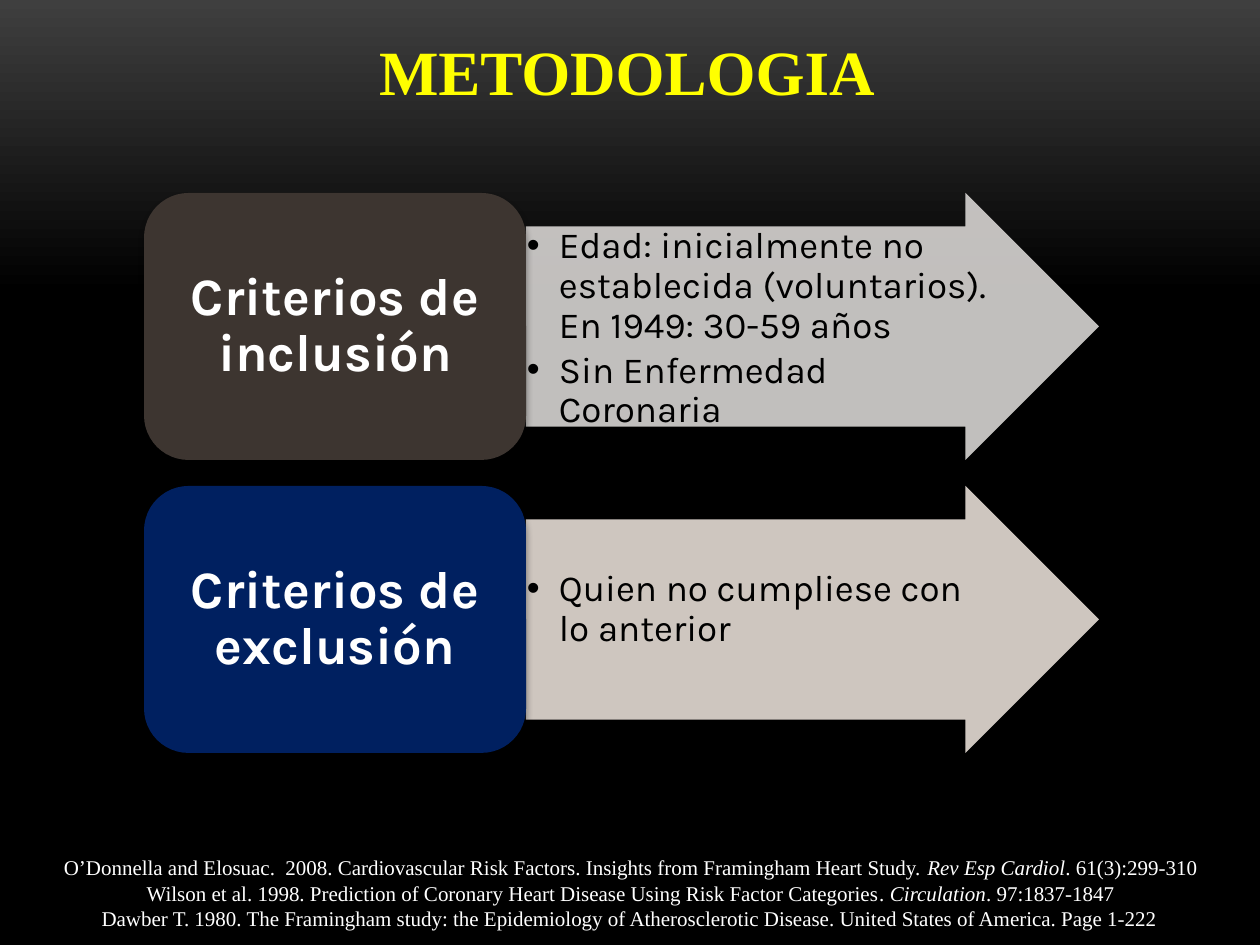
"""Build the methodology slide with its inclusion and exclusion criteria."""
from copy import deepcopy
from dataclasses import dataclass

from lxml import etree
from pptx import Presentation
from pptx.dml.color import RGBColor
from pptx.enum.shapes import MSO_SHAPE
from pptx.enum.text import MSO_ANCHOR, MSO_AUTO_SIZE, PP_ALIGN
from pptx.oxml import parse_xml
from pptx.oxml.ns import nsdecls, qn
from pptx.util import Emu, Pt

ARROW, ROUNDED = MSO_SHAPE.RIGHT_ARROW, MSO_SHAPE.ROUNDED_RECTANGLE
TOP, MIDDLE = MSO_ANCHOR.TOP, MSO_ANCHOR.MIDDLE
CENTER, LEFT = PP_ALIGN.CENTER, PP_ALIGN.LEFT
FIXED = MSO_AUTO_SIZE.NONE
PX_PER_INCH = 126
SLIDE_W, SLIDE_H = 1260, 945
ROW_TOP, ROW_PITCH, ROW_H = 193, 293, 267
LABEL_X, LABEL_W = 144, 382
ARROW_X, ARROW_W = 526, 573
LIST_W, LIST_H, LIST_INDENT = 474, 200, 32


@dataclass(frozen=True)
class Theme:
    """Colours, fonts and type sizes of the slide."""
    sky: str = "3F3F3F"
    black: str = "000000"
    white: str = "FFFFFF"
    yellow: str = "FFFF00"
    serif: str = "Times New Roman"
    sans: str = "Karla"
    title_size: int = 36
    label_size: int = 30
    list_size: int = 21
    reference_size: int = 12


@dataclass(frozen=True)
class Box:
    """A rectangle in px."""
    x: int
    y: int
    w: int
    h: int


@dataclass(frozen=True)
class Criterion:
    """One row: a label and the arrow that lists its conditions."""
    label: str
    conditions: tuple[str, ...]
    label_fill: str
    arrow_fill: str
    list_inset: int


@dataclass(frozen=True)
class Reference:
    """A citation whose journal is set in italics."""
    lead: str
    journal: str = ""
    tail: str = ""


THEME = Theme()
CRITERIA = (
    Criterion("Criterios de inclusión",
              ("Edad: inicialmente no establecida (voluntarios). En 1949: 30-59 años",
               "Sin Enfermedad Coronaria"), "3D3530", "D7D4D2", 1),
    Criterion("Criterios de exclusión", ("Quien no cumpliese con lo anterior",),
              "002060", "E5DCD4", 51),
)
REFERENCES = (
    (Box(0, 900, 1260, 38), (
        Reference("Dawber T. 1980. The Framingham study: the Epidemiology of "
                  "Atherosclerotic Disease. United States of America. Page 1-222"),)),
    (Box(5, 849, 1251, 63), (
        Reference("O’Donnella and Elosuac.  2008. Cardiovascular Risk Factors. "
                  "Insights from Framingham Heart Study. ",
                  "Rev Esp Cardiol", ". 61(3):299-310"),
        Reference("Wilson et al. 1998. Prediction of Coronary Heart Disease "
                  "Using Risk Factor Categories", ". Circulation", ". 97:1837-1847"))),
)


def px(length: int) -> Emu:
    """Turn px into EMU."""
    return Emu(round(length * 914400 / PX_PER_INCH))


def rgb(color: str) -> RGBColor:
    """Turn a hex string into a colour."""
    return RGBColor.from_string(color)


def apply(target, **values) -> None:
    """Set every given attribute on the target."""
    for name, value in values.items():
        setattr(target, name, value)


def place(shape, box: Box) -> None:
    """Move and size a shape."""
    apply(shape, left=px(box.x), top=px(box.y), width=px(box.w), height=px(box.h))


def set_frame(frame, anchor, side: int, top: int, bottom: int) -> None:
    """Set wrapping, anchor and insets of a text frame."""
    apply(frame, word_wrap=True, auto_size=FIXED, vertical_anchor=anchor,
          margin_left=px(side), margin_right=px(side),
          margin_top=px(top), margin_bottom=px(bottom))


def write(paragraph, text: str, face: str, size: int, color: str,
          bold: bool = False, italic: bool = False) -> None:
    """Add one formatted run."""
    run = paragraph.add_run()
    run.text = text
    apply(run.font, name=face, size=Pt(size), bold=bold, italic=italic)
    run.font.color.rgb = rgb(color)


def paragraphs(frame, count: int) -> list:
    """Return the frame's first paragraph and as many new ones as needed."""
    return [frame.paragraphs[0]] + [frame.add_paragraph() for _ in range(count - 1)]


def draw_background(slide) -> None:
    """Fade from grey at the top to black."""
    fill = slide.background.fill
    fill.gradient()
    fill.gradient_angle = 270
    for stop, color, position in zip(fill.gradient_stops, (THEME.sky, THEME.black), (0, 0.31)):
        stop.color.rgb = rgb(color)
        stop.position = position
    stops = slide.element.find(".//" + qn("a:gsLst"))
    last = deepcopy(stops[-1])
    last.set("pos", "100000")
    stops.append(last)


def draw_block(slide, kind, box: Box, color: str):
    """Draw a filled preset shape without outline."""
    block = slide.shapes.add_shape(kind, *map(px, (box.x, box.y, box.w, box.h)))
    block.shadow.inherit = False
    block.fill.solid()
    block.fill.fore_color.rgb = rgb(color)
    block.line.fill.background()
    return block


def draw_criterion(slide, criterion: Criterion, row: int, conditions) -> None:
    """Draw the arrow, its list and the label of one row."""
    y = ROW_TOP + row * ROW_PITCH
    arrow = draw_block(slide, ARROW, Box(ARROW_X, y, ARROW_W, ROW_H), criterion.arrow_fill)
    arrow.adjustments[0], arrow.adjustments[1] = 0.75, 0.5
    tint = arrow.element.spPr.find(qn("a:solidFill"))[0]
    etree.SubElement(tint, qn("a:alpha"), val="90000")

    place(conditions, Box(ARROW_X, y + 33, LIST_W, LIST_H))
    slide.shapes.element.append(conditions.element)
    set_frame(conditions.text_frame, TOP, 1, criterion.list_inset, 1)
    items = paragraphs(conditions.text_frame, len(criterion.conditions))
    for paragraph, text in zip(items, criterion.conditions):
        apply(paragraph, alignment=LEFT, line_spacing=0.9, space_before=Pt(0), space_after=Pt(3))
        margins = paragraph._p.get_or_add_pPr()
        margins.set("marL", str(px(LIST_INDENT)))
        margins.set("indent", str(-px(LIST_INDENT)))
        write(paragraph, text, THEME.sans, THEME.list_size, THEME.black)

    label = draw_block(slide, ROUNDED, Box(LABEL_X, y, LABEL_W, ROW_H), criterion.label_fill)
    effects = label.element.spPr.find(qn("a:effectLst"))
    effects.append(parse_xml(
        f'<a:outerShdw {nsdecls("a")} blurRad="50800" dist="43180" dir="5400000" '
        f'rotWithShape="0"><a:srgbClr val="{THEME.black}"><a:alpha val="40000"/>'
        '</a:srgbClr></a:outerShdw>'))
    set_frame(label.text_frame, MIDDLE, 15, 8, 8)
    heading = label.text_frame.paragraphs[0]
    apply(heading, alignment=CENTER, line_spacing=0.9)
    write(heading, criterion.label, THEME.sans, THEME.label_size, THEME.white, bold=True)


def draw_references(slide, box: Box, references: tuple[Reference, ...]) -> None:
    """Write centred citations, one a paragraph."""
    notes = slide.shapes.add_textbox(*map(px, (box.x, box.y, box.w, box.h)))
    set_frame(notes.text_frame, TOP, 13, 6, 6)
    for paragraph, reference in zip(paragraphs(notes.text_frame, len(references)), references):
        paragraph.alignment = CENTER
        for text in (reference.lead, reference.journal, reference.tail):
            if text:
                write(paragraph, text, THEME.serif, THEME.reference_size, THEME.white,
                      italic=text == reference.journal)


def main() -> None:
    """Build and save the slide."""
    deck = Presentation()
    apply(deck, slide_width=px(SLIDE_W), slide_height=px(SLIDE_H))
    slide = deck.slides.add_slide(deck.slide_layouts[3])
    draw_background(slide)
    for box, references in REFERENCES:
        draw_references(slide, box, references)
    title = slide.shapes.title
    place(title, Box(346, 18, 562, 105))
    set_frame(title.text_frame, MIDDLE, 13, 6, 6)
    heading = title.text_frame.paragraphs[0]
    heading.alignment = CENTER
    write(heading, "METODOLOGIA", THEME.serif, THEME.title_size, THEME.yellow, bold=True)
    for row, criterion in enumerate(CRITERIA):
        draw_criterion(slide, criterion, row, slide.placeholders[row + 1])
    deck.save("out.pptx")


if __name__ == "__main__":
    main()
